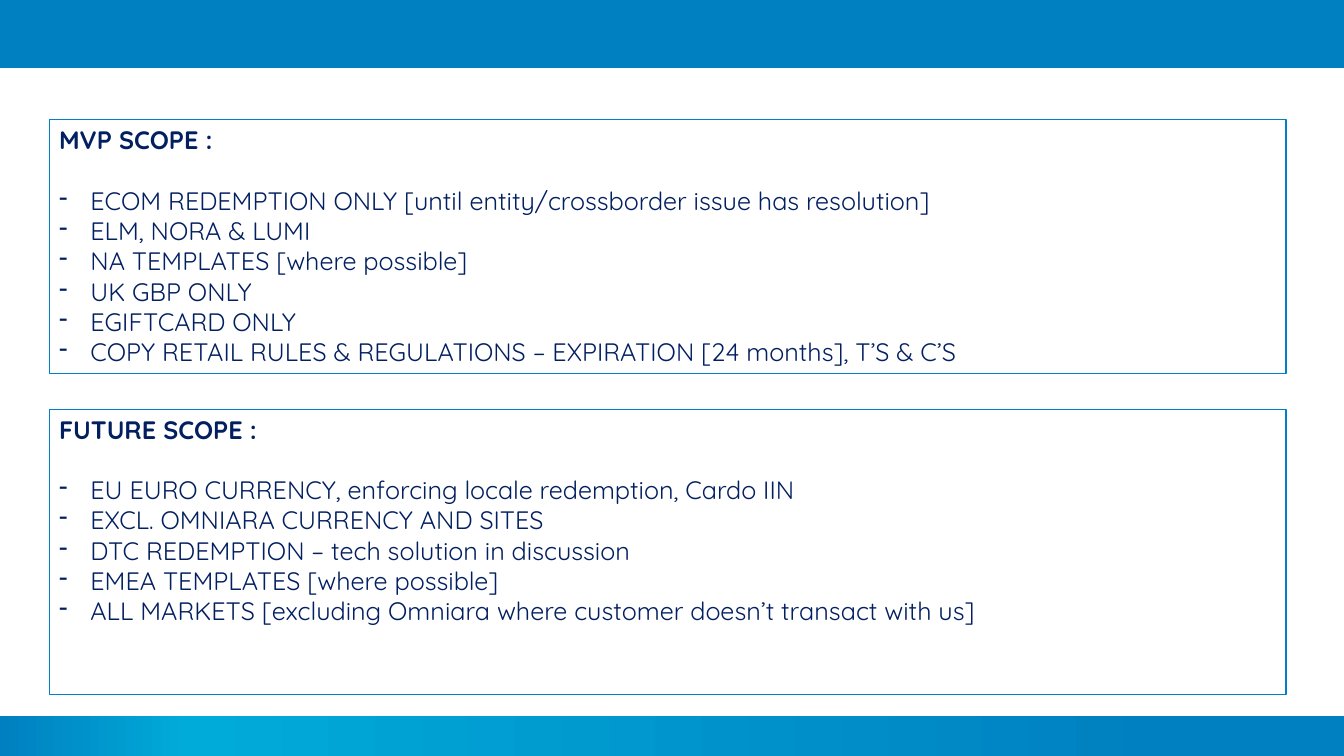
import copy
from dataclasses import dataclass

import pptx
import pptx.dml.color
import pptx.enum.shapes
import pptx.enum.text
import pptx.oxml.ns
import pptx.oxml.xmlchemy
import pptx.util
from lxml import etree

Cm = pptx.util.Cm
Pt = pptx.util.Pt
RGB = pptx.dml.color.RGBColor
qn = pptx.oxml.ns.qn


@dataclass(frozen=True)
class Theme:
    font: str = "Quicksand"
    text_size: int = 18
    heading_gap: float = 21.6
    text: RGB = RGB(0x02, 0x1F, 0x60)
    bar: RGB = RGB(0x00, 0x80, 0xC0)
    bar_light: RGB = RGB(0x00, 0xAB, 0xD9)
    border: RGB = RGB(0x00, 0x7F, 0xCB)


THEME = Theme()
WIDTH, HEIGHT = Cm(33.87), Cm(19.05)
HEADER_HEIGHT, FOOTER_HEIGHT = Cm(1.71), Cm(1.01)
PANEL_LEFT, PANEL_WIDTH = Cm(1.24), Cm(31.17)

PANELS = [
    (Cm(3.02), Cm(6.4), "MVP SCOPE :", [
        "ECOM REDEMPTION ONLY [until entity/crossborder issue has resolution]",
        "ELM, NORA & LUMI",
        "NA TEMPLATES [where possible]",
        "UK GBP ONLY",
        "EGIFTCARD ONLY",
        "COPY RETAIL RULES & REGULATIONS – EXPIRATION [24 months], T’S & C’S",
    ]),
    (Cm(10.31), Cm(7.19), "FUTURE SCOPE :", [
        "EU EURO CURRENCY, enforcing locale redemption, Cardo IIN",
        "EXCL. OMNIARA CURRENCY AND SITES",
        "DTC REDEMPTION – tech solution in discussion",
        "EMEA TEMPLATES [where possible]",
        "ALL MARKETS [excluding Omniara where customer doesn’t transact with us]",
    ]),
]


def add_rectangle(slide, left, top, width, height):
    shape = slide.shapes.add_shape(
        pptx.enum.shapes.MSO_SHAPE.RECTANGLE, left, top, width, height)
    shape.shadow.inherit = False
    return shape


def add_header(slide, left, top, width, height):
    bar = add_rectangle(slide, left, top, width, height)
    bar.fill.solid()
    bar.fill.fore_color.rgb = THEME.bar
    bar.line.fill.background()


def add_footer(slide, left, top, width, height):
    bar = add_rectangle(slide, left, top, width, height)
    bar.line.fill.background()
    bar.fill.gradient()
    bar.fill.gradient_angle = 0
    stop_list = next(bar._element.spPr.iter(qn("a:gsLst")))
    stop_list.append(copy.deepcopy(stop_list[0]))
    stops = [(0, THEME.bar), (0.14, THEME.bar_light), (0.87, THEME.bar)]
    for stop, (position, color) in zip(bar.fill.gradient_stops, stops):
        stop.position = position
        stop.color.rgb = color


def add_dash_bullet(paragraph):
    properties = paragraph._p.get_or_add_pPr()
    indent = Cm(0.79)
    properties.set("marL", str(indent))
    properties.set("indent", str(-indent))
    etree.SubElement(properties, qn("a:buFontTx"))
    etree.SubElement(properties, qn("a:buChar")).set("char", "-")


def style_paragraph(paragraph, bold):
    paragraph.alignment = pptx.enum.text.PP_ALIGN.LEFT
    font = paragraph.font
    font.name = THEME.font
    font.size = Pt(THEME.text_size)
    font.bold = bold
    font.color.rgb = THEME.text


def add_scope_panel(slide, left, top, width, height, heading, items):
    panel = add_rectangle(slide, left, top, width, height)
    panel.fill.background()
    panel.line.color.rgb = THEME.border
    panel.line.width = Pt(0.75)
    frame = panel.text_frame
    frame.word_wrap = True
    frame.vertical_anchor = pptx.enum.text.MSO_ANCHOR.TOP

    title = frame.paragraphs[0]
    title.text = heading
    title.space_after = Pt(THEME.heading_gap)
    style_paragraph(title, bold=True)
    for item in items:
        paragraph = frame.add_paragraph()
        paragraph.text = item
        add_dash_bullet(paragraph)
        style_paragraph(paragraph, bold=False)


def main():
    presentation = pptx.Presentation()
    presentation.slide_width, presentation.slide_height = WIDTH, HEIGHT
    slide = presentation.slides.add_slide(presentation.slide_layouts[6])
    add_footer(slide, 0, HEIGHT - FOOTER_HEIGHT, WIDTH, FOOTER_HEIGHT)
    add_header(slide, 0, 0, WIDTH, HEADER_HEIGHT)
    for top, height, heading, items in PANELS:
        add_scope_panel(slide, PANEL_LEFT, top, PANEL_WIDTH, height, heading, items)
    presentation.save("out.pptx")


if __name__ == "__main__":
    main()
